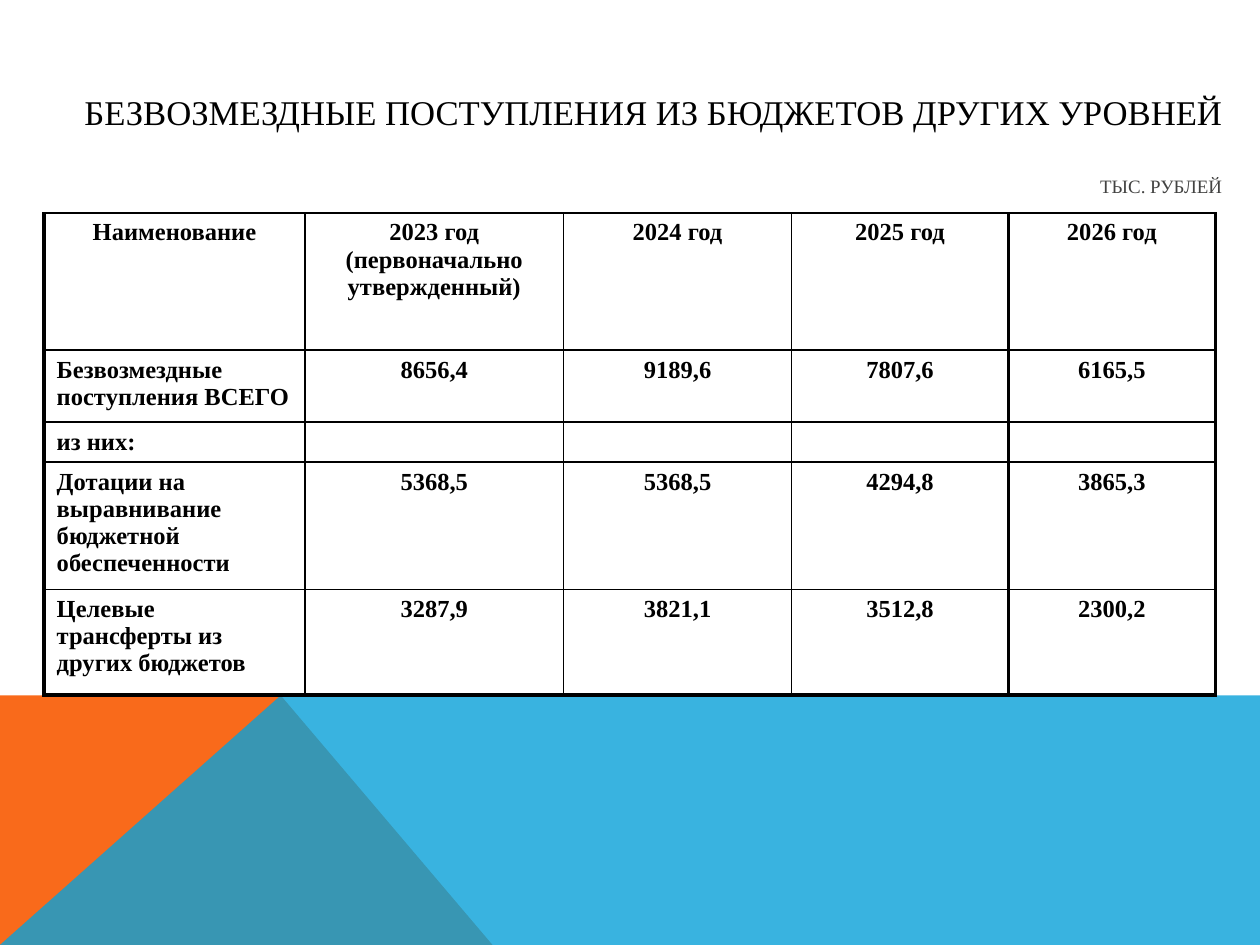
import pptx
import pptx.dml.color
import pptx.enum.text
import pptx.oxml.ns
import pptx.util
import lxml.etree

Cm = pptx.util.Cm
Pt = pptx.util.Pt
RGBColor = pptx.dml.color.RGBColor
qn = pptx.oxml.ns.qn
ALIGN = pptx.enum.text.PP_ALIGN

BLACK = RGBColor(0x00, 0x00, 0x00)
GRAY = RGBColor(0x43, 0x43, 0x42)
ORANGE = RGBColor(0xF9, 0x6A, 0x1B)
BLUE = RGBColor(0x08, 0xA1, 0xD9)
FONT = "Times New Roman"


def add_band(slide, points, color):
    corners = [(Cm(x), Cm(y)) for x, y in points]
    builder = slide.shapes.build_freeform(*corners[0])
    builder.add_line_segments(corners[1:], close=True)
    shape = builder.convert_to_shape()
    shape.shadow.inherit = False
    shape.fill.solid()
    shape.fill.fore_color.rgb = color
    shape.line.fill.background()
    return shape


def add_border(cell, side, width):
    properties = cell._tc.get_or_add_tcPr()
    line = lxml.etree.SubElement(properties, qn(f"a:ln{side}"), w=str(Pt(width)))
    fill = lxml.etree.SubElement(line, qn("a:solidFill"))
    lxml.etree.SubElement(fill, qn("a:srgbClr"), val=str(BLACK))


presentation = pptx.Presentation()
presentation.slide_width = Cm(25.4)
presentation.slide_height = Cm(19.05)
slide = presentation.slides.add_slide(presentation.slide_layouts[5])

add_band(slide, [(0, 19.05), (0, 14.02), (5.66, 14.02), (9.93, 19.05)], ORANGE)
blue_band = add_band(slide, [(0, 19.05), (5.66, 14.02), (25.4, 14.02), (25.4, 19.05)], BLUE)
blue_color = blue_band.fill._xPr.find(qn("a:solidFill"))[0]
lxml.etree.SubElement(blue_color, qn("a:alpha"), val="80000")

title = slide.shapes.title
title.left, title.top, title.width, title.height = Cm(0.89), Cm(0.76), Cm(24), Cm(1.96)
frame = title.text_frame
frame.text = "БЕЗВОЗМЕЗДНЫЕ ПОСТУПЛЕНИЯ ИЗ БЮДЖЕТОВ ДРУГИХ УРОВНЕЙ\nТЫС. РУБЛЕЙ"
frame.word_wrap = True
frame.auto_size = pptx.enum.text.MSO_AUTO_SIZE.NONE
frame.vertical_anchor = pptx.enum.text.MSO_ANCHOR.TOP
frame.margin_top = Cm(1.08)
title_styles = [(19.8, BLACK, 0), (10.8, GRAY, 23.7)]
for paragraph, (size, color, space) in zip(frame.paragraphs, title_styles):
    paragraph.alignment = ALIGN.RIGHT
    paragraph.space_before = Pt(space)
    paragraph.font.name = FONT
    paragraph.font.size = Pt(size)
    paragraph.font.color.rgb = color

rows = [
    ["Наименование", "2023 год (первоначально утвержденный)", "2024 год", "2025 год", "2026 год"],
    ["Безвозмездные поступления ВСЕГО", "8656,4", "9189,6", "7807,6", "6165,5"],
    ["из них:", "", "", "", ""],
    ["Дотации на выравнивание бюджетной обеспеченности", "5368,5", "5368,5", "4294,8", "3865,3"],
    ["Целевые трансферты из других бюджетов", "3287,9", "3821,1", "3512,8", "2300,2"],
]
column_widths = [5.26, 5.21, 4.6, 4.37, 4.17]
row_heights = [2.77, 1.45, 0.79, 2.57, 2.13]
table = slide.shapes.add_table(
    len(rows), len(column_widths), Cm(0.89), Cm(4.29), Cm(sum(column_widths)), Cm(sum(row_heights))
).table
table.first_row = False
table.horz_banding = False
for column, width in zip(table.columns, column_widths):
    column.width = Cm(width)
for row, height in zip(table.rows, row_heights):
    row.height = Cm(height)

last_row, last_column = len(rows) - 1, len(column_widths) - 1
for row_index, texts in enumerate(rows):
    for column_index, text in enumerate(texts):
        cell = table.cell(row_index, column_index)
        cell.text = text
        paragraph = cell.text_frame.paragraphs[0]
        is_label = column_index == 0 and row_index > 0
        paragraph.alignment = ALIGN.LEFT if is_label else ALIGN.CENTER
        paragraph.font.name = FONT
        paragraph.font.size = Pt(14)
        paragraph.font.bold = True
        paragraph.font.color.rgb = BLACK
        add_border(cell, "L", 2.25 if column_index in (0, last_column) else 1)
        add_border(cell, "R", 2.25 if column_index >= last_column - 1 else 1)
        add_border(cell, "T", 1)
        add_border(cell, "B", 2.25 if row_index == last_row else 1)
        cell.fill.background()

presentation.save("out.pptx")
